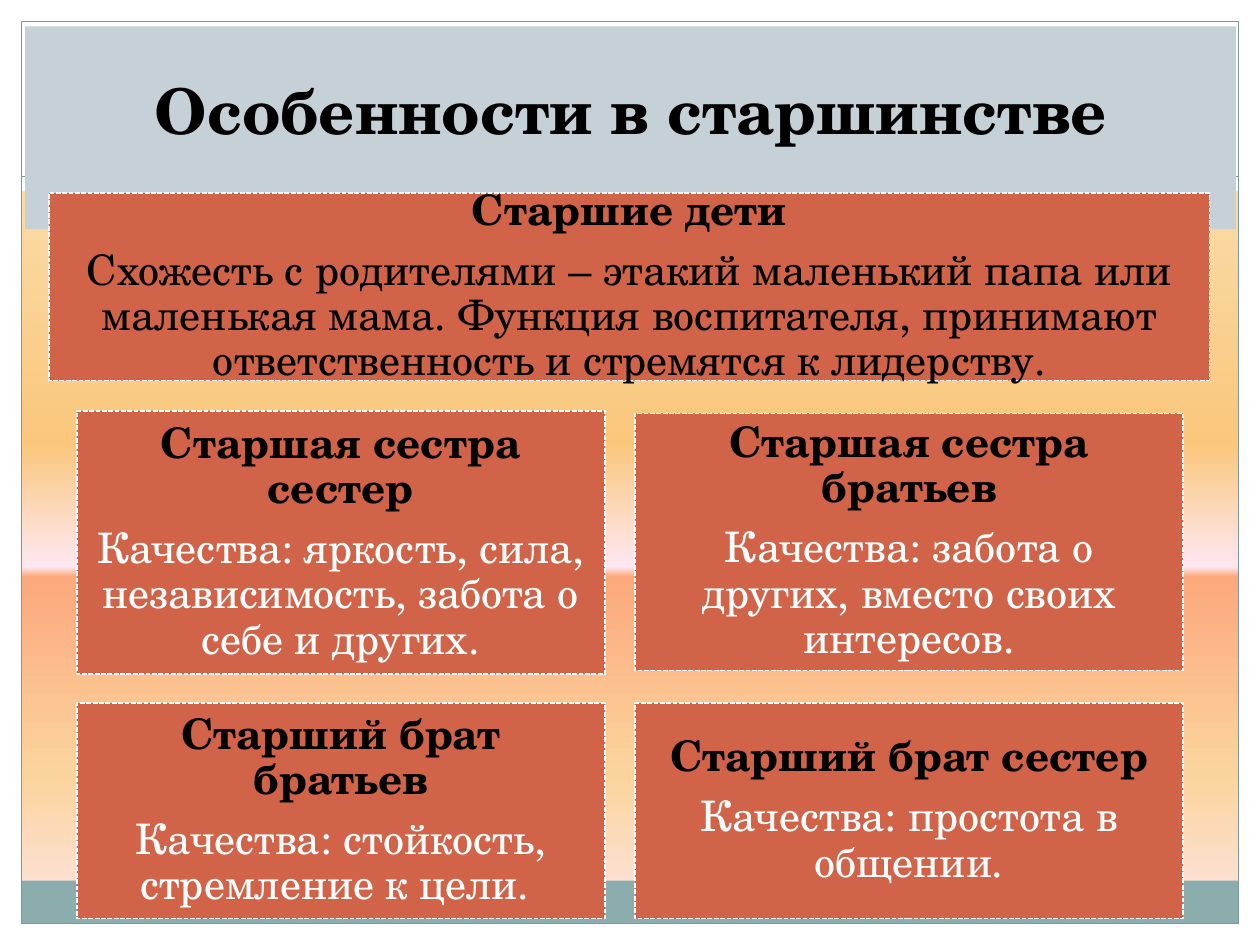
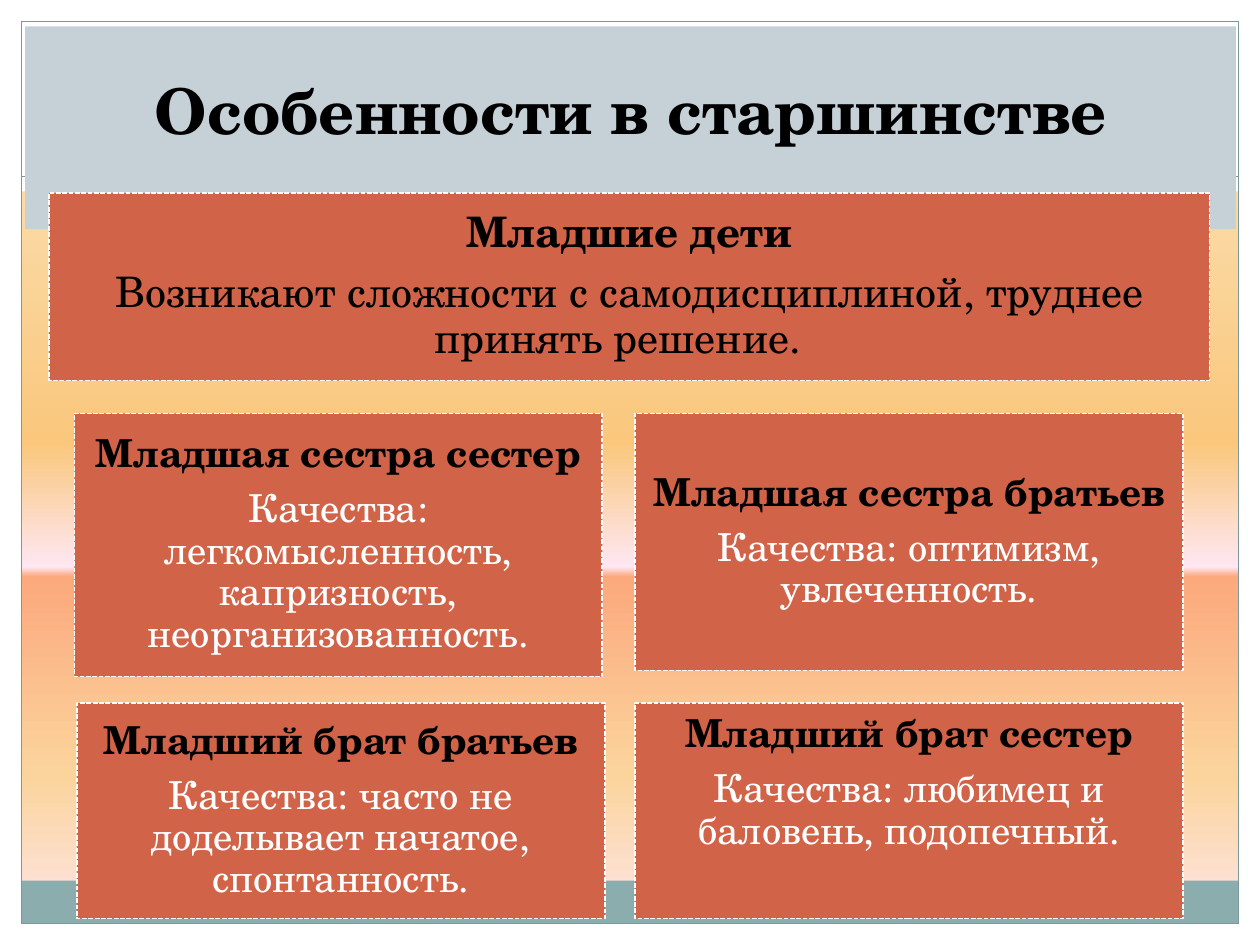
import dataclasses

import lxml.etree
import pptx
import pptx.dml.color
import pptx.enum.dml
import pptx.enum.shapes
import pptx.enum.text
import pptx.oxml.ns
import pptx.util

Pt = pptx.util.Pt
qn = pptx.oxml.ns.qn


@dataclasses.dataclass(frozen=True)
class Theme:
    font: str = "TeX Gyre Schola"
    title_size: int = 36
    large: int = 24
    small: int = 22
    dark: str = "000000"
    light: str = "FFFFFF"
    card: str = "D16349"
    title_fill: str = "C5D1D7"
    bottom_band: str = "8CADAE"
    frame: str = "7C999A"
    sky: tuple = ((0, "FBEAC7"), (47, "FAC77D"), (60, "FEE7F2"),
                  (61, "FBA97D"), (82, "FBD49C"), (100, "FEE7F2"))


THEME = Theme()
PAGE_WIDTH, PAGE_HEIGHT = 720, 540
MARGIN = 12.2

# Places on the page: left, top, width, height
TITLE_PLACE = (14.4, 15.1, 691.9, 115.9)
GROUP_PLACE = (28.1, 110.2, 663.1, 107.3)
LEFT_COLUMN, RIGHT_COLUMN = (43.9, 301.7), (362.9, 313.2)
LOWER_ROW = (401.8, 123.1)
CARD_PLACES = [
    (left, top, width, height)
    for (top, height), (left, width) in (
        ((234.7, 150.5), LEFT_COLUMN), ((236.2, 146.9), RIGHT_COLUMN),
        (LOWER_ROW, LEFT_COLUMN), (LOWER_ROW, RIGHT_COLUMN))
]

TITLE = "Особенности в старшинстве"
OLDER = {
    "group": ("Старшие дети",
              "Схожесть с родителями – этакий маленький папа или маленькая мама. "
              "Функция воспитателя, принимают ответственность и стремятся к лидерству."),
    "cards": [
        ("Старшая сестра сестер",
         "Качества: яркость, сила, независимость, забота о себе и других."),
        ("Старшая сестра братьев",
         "Качества: забота о других, вместо своих интересов."),
        ("Старший брат братьев", "Качества: стойкость, стремление к цели. "),
        ("Старший брат сестер", "Качества: простота в общении."),
    ],
    "places": CARD_PLACES,
    "size": THEME.large,
    "last_lift": 0,
}
YOUNGER = {
    "group": ("Младшие дети",
              "Возникают сложности с самодисциплиной, труднее принять решение.  "),
    "cards": [
        ("Младшая сестра сестер",
         "Качества: легкомысленность, капризность, неорганизованность."),
        ("Младшая сестра братьев", "Качества: оптимизм, увлеченность."),
        ("Младший брат братьев",
         "Качества: часто не доделывает начатое, спонтанность."),
        ("Младший брат сестер", "Качества: любимец и баловень, подопечный."),
    ],
    "places": [(42.5, 236.2, 301.7, 150.5)] + CARD_PLACES[1:],
    "size": THEME.small,
    "last_lift": 31.6,
}


def rgb(color):
    return pptx.dml.color.RGBColor.from_string(color)


def set_values(target, values):
    for name, value in values.items():
        setattr(target, name, value)


def set_line(line, color, width, dashed=False):
    line.color.rgb = rgb(color)
    line.width = Pt(width)
    if dashed:
        line.dash_style = pptx.enum.dml.MSO_LINE.SQUARE_DOT


def set_fill(shape, color):
    shape.fill.solid()
    shape.fill.fore_color.rgb = rgb(color)


def add_box(page, place, fill=None):
    box = page.shapes.add_shape(
        pptx.enum.shapes.MSO_SHAPE.RECTANGLE, *map(Pt, place))
    box.shadow.inherit = False
    if fill:
        set_fill(box, fill)
    else:
        box.fill.background()
    box.line.fill.background()
    return box


def add_span(para, text, size, color, bold):
    span = para.add_run()
    span.text = text
    set_values(span.font, {"name": THEME.font, "size": Pt(size), "bold": bold})
    span.font.color.rgb = rgb(color)


def add_card(page, place, texts, size, body_color, lift=0):
    """Draw a filled card with a bold heading and a body; lift raises its text."""
    card = add_box(page, place, THEME.card)
    set_line(card.line, THEME.light, 0.9, dashed=True)
    inset = Pt(0.3 * size)
    frame = card.text_frame
    set_values(frame, {
        "word_wrap": True,
        "vertical_anchor": pptx.enum.text.MSO_ANCHOR.MIDDLE,
        "margin_left": inset, "margin_right": inset,
        "margin_top": inset, "margin_bottom": inset + Pt(lift),
    })
    styles = ((THEME.dark, True), (body_color, False))
    for index, (text, (color, bold)) in enumerate(zip(texts, styles)):
        para = frame.add_paragraph() if index else frame.paragraphs[0]
        set_values(para, {
            "alignment": pptx.enum.text.PP_ALIGN.CENTER,
            "line_spacing": 0.9, "space_after": Pt(0.35 * size),
        })
        add_span(para, text, size, color, bold)


def set_title(page, text):
    title = page.shapes.title
    set_values(title, dict(zip(("left", "top", "width", "height"),
                               map(Pt, TITLE_PLACE))))
    set_fill(title, THEME.title_fill)
    set_values(title.text_frame, {
        "auto_size": pptx.enum.text.MSO_AUTO_SIZE.NONE,
        "word_wrap": True,
        "vertical_anchor": pptx.enum.text.MSO_ANCHOR.BOTTOM,
        "margin_bottom": Pt(47),
    })
    para = title.text_frame.paragraphs[0]
    para.alignment = pptx.enum.text.PP_ALIGN.CENTER
    add_span(para, text, THEME.title_size, THEME.dark, True)


def set_sky(layout):
    """Fill the layout background with the vertical gradient."""
    fill = layout.background.fill
    fill.gradient()
    fill.gradient_angle = 270
    stops = layout.element.find(".//" + qn("a:gsLst"))
    for stop in list(stops):
        stops.remove(stop)
    for percent, color in THEME.sky:
        stop = lxml.etree.SubElement(stops, qn("a:gs"), pos=str(percent * 1000))
        lxml.etree.SubElement(stop, qn("a:srgbClr"), val=color)


def decorate_layout(layout, page):
    """Draw the shared bands and frame on a page, then move them to its layout."""
    set_sky(layout)
    inner_width = PAGE_WIDTH - 2 * MARGIN
    inner_bottom = PAGE_HEIGHT - MARGIN
    parts = [add_box(page, place, THEME.light) for place in (
        (0, inner_bottom, PAGE_WIDTH, MARGIN),
        (0, 0, PAGE_WIDTH, 109.4),
        (0, 0, MARGIN, PAGE_HEIGHT),
        (PAGE_WIDTH - MARGIN, 0, MARGIN, PAGE_HEIGHT))]
    parts.append(add_box(page, (MARGIN, 503.3, inner_width, 24.5),
                         THEME.bottom_band))

    frame = add_box(page, (MARGIN, MARGIN, inner_width, inner_bottom - MARGIN))
    set_line(frame.line, THEME.frame, 0.75)

    rule = page.shapes.add_connector(
        pptx.enum.shapes.MSO_CONNECTOR.STRAIGHT,
        *map(Pt, (MARGIN, 100.8, PAGE_WIDTH - MARGIN, 100.8)))
    set_line(rule.line, THEME.frame, 0.75, dashed=True)
    lxml.etree.SubElement(rule.element.spPr, qn("a:effectLst"))

    for part in parts + [frame, rule]:
        layout.shapes.element.append(part.element)


def fill_page(page, content):
    set_title(page, TITLE)
    add_card(page, GROUP_PLACE, content["group"], THEME.large, THEME.dark)
    lifts = (0, 0, 0, content["last_lift"])
    for place, texts, lift in zip(content["places"], content["cards"], lifts):
        add_card(page, place, texts, content["size"], THEME.light, lift)


def main():
    deck = pptx.Presentation()
    deck.slide_width, deck.slide_height = Pt(PAGE_WIDTH), Pt(PAGE_HEIGHT)
    layout = deck.slide_layouts.get_by_name("Title Only")
    pages = [deck.slides.add_slide(layout) for _ in range(2)]
    decorate_layout(layout, pages[0])
    for page, content in zip(pages, (OLDER, YOUNGER)):
        fill_page(page, content)
    deck.save("out.pptx")


if __name__ == "__main__":
    main()
